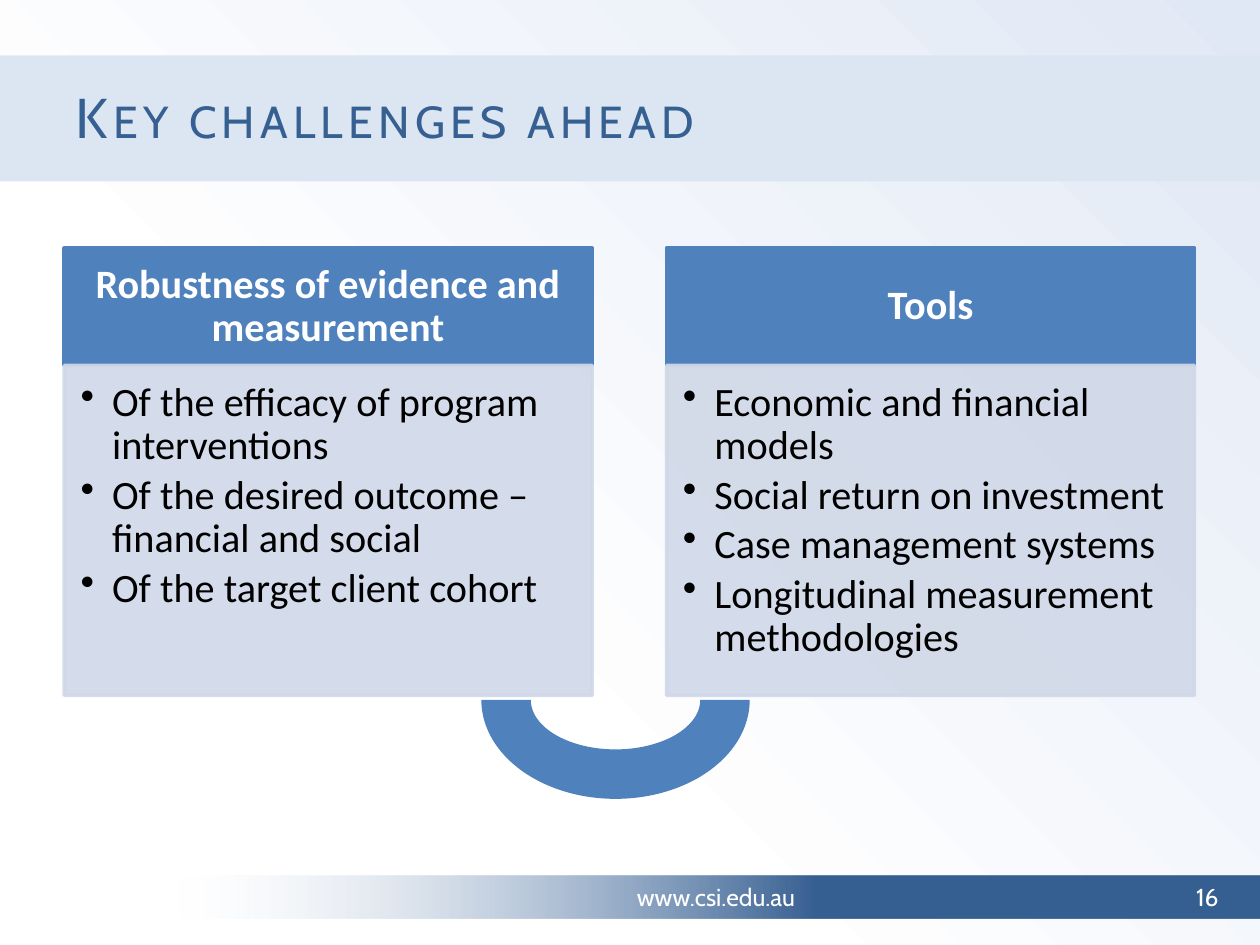
from lxml.etree import SubElement
from pptx import Presentation
from pptx.dml.color import RGBColor
from pptx.enum.shapes import MSO_SHAPE as Preset
from pptx.enum.text import MSO_ANCHOR as Anchor, MSO_AUTO_SIZE as AutoSize, PP_ALIGN as Align
from pptx.oxml.ns import qn
from pptx.util import Inches, Pt

NAVY, BLUE, PALE, PANEL = "376092", "4F81BD", "DCE6F2", "D0D8E8"
WHITE, BLACK = "FFFFFF", "000000"
COLUMNS = [
    ("Robustness of evidence and measurement", [
        "Of the efficacy of program interventions",
        "Of the desired outcome – financial and social",
        "Of the target client cohort"]),
    ("Tools", [
        "Economic and financial models",
        "Social return on investment",
        "Case management systems",
        "Longitudinal measurement methodologies"]),
]


def set_color(color_format, value, alpha=None):
    """Set a colour from a hex string, with optional opacity in percent."""
    color_format.rgb = RGBColor.from_string(value)
    if alpha is not None:
        color = color_format._xFill.find(qn("a:srgbClr"))
        SubElement(color, qn("a:alpha"), val=str(alpha * 1000))


def set_attributes(target, values):
    """Set each named attribute on the target."""
    for name, value in values.items():
        setattr(target, name, value)


def set_gradient(fill, holder, stops, direction):
    """Replace a solid fill by a gradient of (percent, colour, opacity) stops."""
    fill.solid()
    solid = holder.find(qn("a:solidFill"))
    gradient = solid.makeelement(qn("a:gradFill"), {"rotWithShape": "1"})
    stop_list = SubElement(gradient, qn("a:gsLst"))
    for position, value, alpha in stops:
        stop = SubElement(stop_list, qn("a:gs"), pos=str(position * 1000))
        color = SubElement(stop, qn("a:srgbClr"), val=value)
        SubElement(color, qn("a:alpha"), val=str(alpha * 1000))
    if direction == "linear":
        SubElement(gradient, qn("a:lin"), ang="0", scaled="0")
    else:
        path = SubElement(gradient, qn("a:path"), {"path": "circle"})
        SubElement(path, qn("a:fillToRect"), t="100000", r="100000")
    holder.replace(solid, gradient)


def add_block(slide, preset, box, fill, alpha=None, outlined=False):
    """Add a preset shape without shadow."""
    shape = slide.shapes.add_shape(preset, *map(Inches, box))
    shape.shadow.inherit = False
    shape.fill.solid()
    set_color(shape.fill.fore_color, fill, alpha)
    if outlined:
        shape.line.width = Pt(2)
        shape.line.fill.solid()
        set_color(shape.line.fill.fore_color, fill, alpha)
    else:
        shape.line.fill.background()
    return shape


def write_text(shape, lines, font, color, paragraph_format, frame_format, bulleted=False):
    """Write one formatted paragraph per line into a shape."""
    frame = shape.text_frame
    set_attributes(frame, {"word_wrap": True, **frame_format})
    for index, line in enumerate(lines):
        paragraph = frame.add_paragraph() if index else frame.paragraphs[0]
        if bulleted:
            properties = paragraph._p.get_or_add_pPr()
            properties.set("marL", str(Inches(0.25)))
            properties.set("indent", str(-Inches(0.25)))
            SubElement(properties, qn("a:buChar"), char="•")
        set_attributes(paragraph, paragraph_format)
        run = paragraph.add_run()
        run.text = line
        set_attributes(run.font, font)
        set_color(run.font.color, color)


def add_title(slide, text):
    """Place the title in small capitals above the band."""
    title = slide.shapes.title
    set_attributes(title, {"left": Inches(0.5), "top": Inches(0.3),
                           "width": Inches(9.19), "height": Inches(1.25)})
    write_text(title, [text], {"name": "Cabin", "size": Pt(32)}, NAVY,
               {"alignment": Align.LEFT},
               {"vertical_anchor": Anchor.MIDDLE, "auto_size": AutoSize.NONE})
    properties = title.text_frame.paragraphs[0].runs[0].font._element
    properties.set("cap", "small")
    properties.set("spc", "300")
    title.element.getparent().append(title.element)


def add_footer(slide):
    """Add the fading footer bar with web address and page number."""
    font = {"name": "Cabin", "size": Pt(14)}
    frame_format = {"vertical_anchor": Anchor.MIDDLE}
    bar = add_block(slide, Preset.RECTANGLE, (1.41, 6.95, 8.59, 0.34), NAVY)
    set_gradient(bar.fill, bar.element.spPr, [(0, PALE, 0), (59, NAVY, 100)], "linear")
    write_text(bar, ["www.csi.edu.au "], font, WHITE,
               {"alignment": Align.CENTER}, frame_format)
    number = slide.shapes.add_textbox(*map(Inches, (9.22, 6.95, 0.55, 0.34)))
    write_text(number, ["16"], font, WHITE, {"alignment": Align.RIGHT}, frame_format)


def add_column(slide, left, heading, points):
    """Add a heading block with a bulleted panel below it."""
    font = {"name": "Calibri", "size": Pt(23)}
    header = add_block(slide, Preset.RECTANGLE, (left, 1.97, 4.19, 0.93), BLUE, outlined=True)
    write_text(header, [heading], {**font, "bold": True}, WHITE,
               {"alignment": Align.CENTER, "line_spacing": 0.9},
               {"vertical_anchor": Anchor.MIDDLE,
                "margin_left": Inches(0.18), "margin_right": Inches(0.18),
                "margin_top": Inches(0.1), "margin_bottom": Inches(0.1)})
    panel = add_block(slide, Preset.RECTANGLE, (left, 2.9, 4.19, 2.62), PANEL, 90, True)
    write_text(panel, points, font, BLACK,
               {"alignment": Align.LEFT, "line_spacing": 0.9, "space_after": Pt(3.4)},
               {"vertical_anchor": Anchor.TOP,
                "margin_left": Inches(0.13), "margin_right": Inches(0.18),
                "margin_top": Inches(0.13), "margin_bottom": Inches(0.2)}, True)


def main():
    """Build the slide and save it."""
    presentation = Presentation()
    set_attributes(presentation, {"slide_width": Inches(10), "slide_height": Inches(7.5)})
    slide = presentation.slides.add_slide(presentation.slide_layouts[5])
    background = slide.background.fill
    background.solid()
    set_gradient(background, slide.element.find(".//" + qn("p:bgPr")),
                 [(35, WHITE, 100), (100, "E1E8F5", 100)], "circle")
    add_block(slide, Preset.RECTANGLE, (0, 0.44, 10, 1), PALE)
    add_footer(slide)
    add_title(slide, "Key challenges ahead")
    for index, (heading, points) in enumerate(COLUMNS):
        add_column(slide, 0.51 + index * 4.78, heading, points)
    arc = add_block(slide, Preset.BLOCK_ARC, (3.82, 4.77, 2.13, 1.57), BLUE)
    arc.rotation = 180
    presentation.save("out.pptx")


if __name__ == "__main__":
    main()
